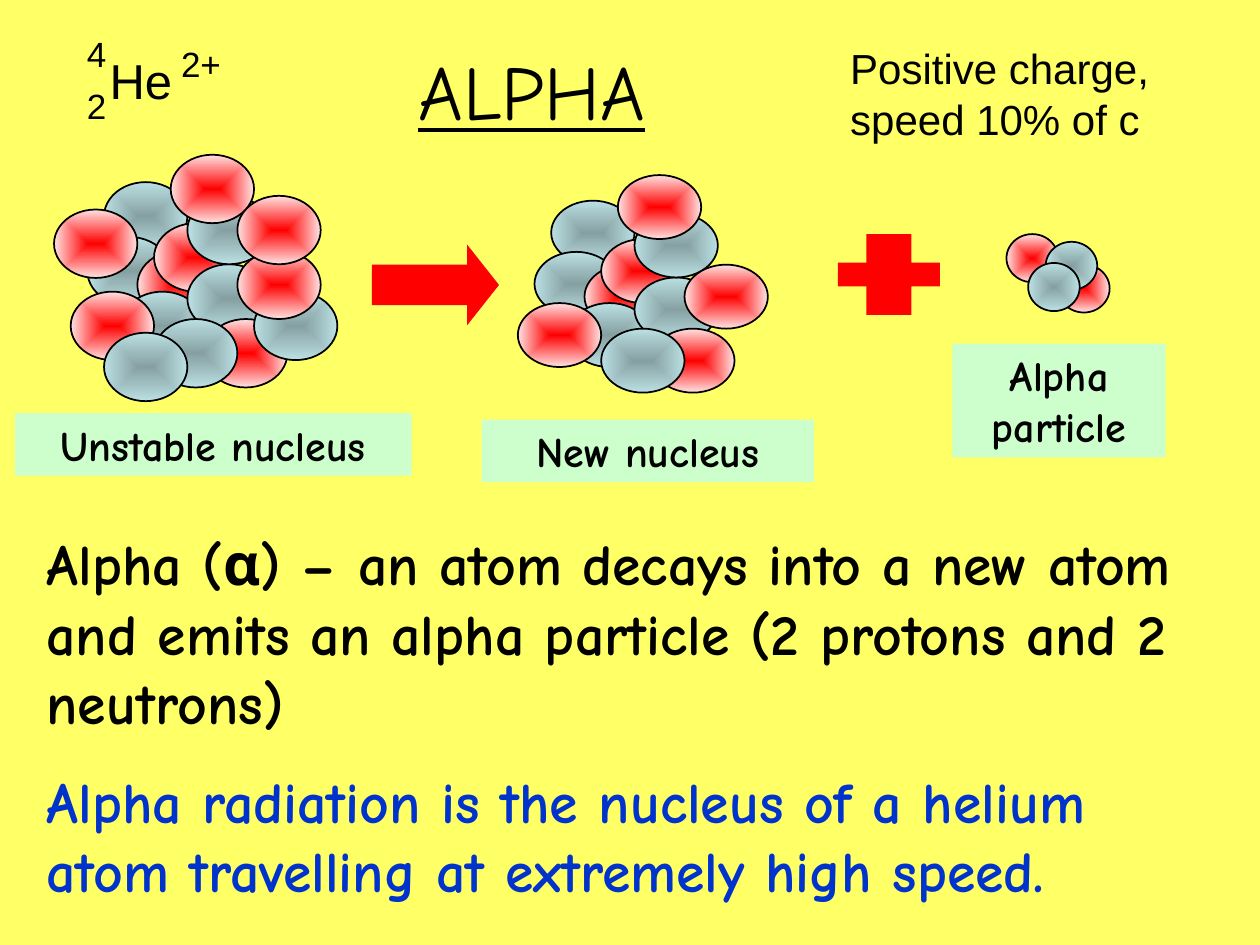
"""Build the alpha decay slide."""
from lxml import etree
from pptx import Presentation
from pptx.dml.color import RGBColor
from pptx.enum.shapes import MSO_SHAPE
from pptx.enum.text import MSO_ANCHOR, PP_ALIGN
from pptx.oxml.ns import qn
from pptx.util import Cm, Pt

ELLIPSE, RECTANGLE = MSO_SHAPE.OVAL, MSO_SHAPE.RECTANGLE
ARROW, PLUS = MSO_SHAPE.RIGHT_ARROW, MSO_SHAPE.CROSS
LEFT, CENTER = PP_ALIGN.LEFT, PP_ALIGN.CENTER
TOP, MIDDLE = MSO_ANCHOR.TOP, MSO_ANCHOR.MIDDLE

YELLOW = RGBColor(0xFF, 0xFF, 0x66)
BLACK = RGBColor(0x00, 0x00, 0x00)
BLUE = RGBColor(0x00, 0x33, 0xCC)
RED = RGBColor(0xFF, 0x00, 0x00)
PINK = RGBColor(0xFF, 0xE2, 0xE2)
GREY = RGBColor(0x86, 0xA0, 0xA2)
PALE_TEAL = RGBColor(0xBB, 0xE0, 0xE3)
MINT = RGBColor(0xCC, 0xFF, 0xCC)
HAND, PLAIN = "Comic Neue", "Arial"

PARTICLE_COLORS = {"p": (RED, PINK), "n": (GREY, PALE_TEAL)}


def write(shape, text, size, font, align=LEFT, bold=False, wrap=True, anchor=TOP):
    frame = shape.text_frame
    frame.text = text
    frame.word_wrap = wrap
    frame.vertical_anchor = anchor
    for paragraph in frame.paragraphs:
        paragraph.alignment = align
        for run in paragraph.runs:
            run.font.name = font
            run.font.size = Pt(size)
            run.font.bold = bold
            run.font.color.rgb = BLACK
    return frame


def add_particle(cluster, kind, left, top, width, height):
    particle = cluster.shapes.add_shape(ELLIPSE, Cm(left), Cm(top), Cm(width), Cm(height))
    particle.shadow.inherit = False
    particle.line.color.rgb = BLACK
    particle.line.width = Pt(1)
    particle.fill.gradient()
    for stop, color in zip(particle.fill.gradient_stops, PARTICLE_COLORS[kind]):
        stop.color.rgb = color
    gradient = particle._element.spPr.find(qn("a:gradFill"))
    gradient.remove(gradient.find(qn("a:lin")))
    shading = etree.SubElement(gradient, qn("a:path"), {"path": "shape"})
    etree.SubElement(shading, qn("a:fillToRect"), dict.fromkeys("ltrb", "50000"))


presentation = Presentation()
presentation.slide_width, presentation.slide_height = Cm(25.4), Cm(19.05)
slide = presentation.slides.add_slide(presentation.slide_layouts[6])
slide.background.fill.solid()
slide.background.fill.fore_color.rgb = YELLOW

title = slide.shapes.add_textbox(Cm(-0.71), Cm(0.53), Cm(22.86), Cm(2.54))
heading = write(title, "ALPHA", 44, HAND, CENTER, anchor=MIDDLE)
heading.paragraphs[0].runs[0].font.underline = True

explanation = slide.shapes.add_textbox(Cm(0.69), Cm(10.52), Cm(24.21), Cm(7.95))
statements = write(
    explanation,
    "Alpha (α) – an atom decays into a new atom and emits an alpha particle "
    "(2 protons and 2 neutrons)\n"
    "Alpha radiation is the nucleus of a helium atom travelling at extremely high speed.",
    33, HAND, bold=True)
statements.paragraphs[1].space_before = Pt(17)
statements.paragraphs[1].runs[0].font.color.rgb = BLUE

# Offsets are counted in fifths of a particle.
clusters = [
    (1.09, 3.12, 1.68, 1.38, [
        ("n", 3, 2), ("n", 2, 6), ("p", 5, 7), ("p", 6, 5), ("n", 4, 10), ("p", 0, 4),
        ("p", 1, 10), ("n", 8, 8), ("p", 9, 12), ("n", 12, 10), ("n", 8, 3), ("p", 11, 7),
        ("n", 6, 12), ("p", 11, 3), ("p", 7, 0), ("n", 3, 13)]),
    (10.44, 3.53, 1.68, 1.29, [
        ("n", 2, 2), ("n", 1, 6), ("p", 4, 7), ("p", 5, 5), ("n", 3, 10), ("p", 0, 10),
        ("n", 7, 8), ("p", 8, 12), ("n", 7, 3), ("p", 10, 7), ("n", 5, 12), ("p", 6, 0)]),
    (20.29, 4.72, 1.04, 0.97, [
        ("p", 0, 0), ("p", 5, 3.15), ("n", 3.8, 0.8), ("n", 2.1, 3)]),
]
for left, top, width, height, particles in clusters:
    cluster = slide.shapes.add_group_shape()
    for kind, column, row in particles:
        add_particle(cluster, kind, left + column * width / 5, top + row * height / 5,
                     width, height)

for caption, left, top, width, height in [
    ("Unstable nucleus", 0.3, 8.33, 8, 1.26),
    ("New nucleus", 9.71, 8.46, 6.7, 1.26),
    ("Alpha particle", 19.2, 6.93, 4.3, 2.29),
]:
    label = slide.shapes.add_shape(RECTANGLE, Cm(left), Cm(top), Cm(width), Cm(height))
    label.shadow.inherit = False
    label.fill.solid()
    label.fill.fore_color.rgb = MINT
    label.line.fill.background()
    write(label, caption, 24, HAND, CENTER, bold=True)

for outline, left, top, width, adjustments in [
    (ARROW, 7.5, 4.93, 2.56, (0.5, 0.395)),
    (PLUS, 16.89, 4.72, 2.06, (0.354,)),
]:
    sign = slide.shapes.add_shape(outline, Cm(left), Cm(top), Cm(width), Cm(1.63))
    sign.shadow.inherit = False
    sign.fill.solid()
    sign.fill.fore_color.rgb = RED
    sign.line.fill.background()
    for index, value in enumerate(adjustments):
        sign.adjustments[index] = value

isotope = slide.shapes.add_group_shape()
for symbol, size, left, top, width, height in [
    ("2", 20, 1.5, 1.57, 0.94, 1.09),
    ("4", 20, 1.5, 0.53, 0.91, 1.09),
    ("He", 28, 1.96, 0.89, 1.78, 1.45),
    ("2+", 20, 3.4, 0.74, 1.32, 1.12),
]:
    part = isotope.shapes.add_textbox(Cm(left), Cm(top), Cm(width), Cm(height))
    write(part, symbol, size, PLAIN, wrap=False)

properties = slide.shapes.add_textbox(Cm(16.89), Cm(0.74), Cm(13.11), Cm(3.33))
write(properties, "Positive charge,\nspeed 10% of c", 24, PLAIN)

presentation.save("out.pptx")
